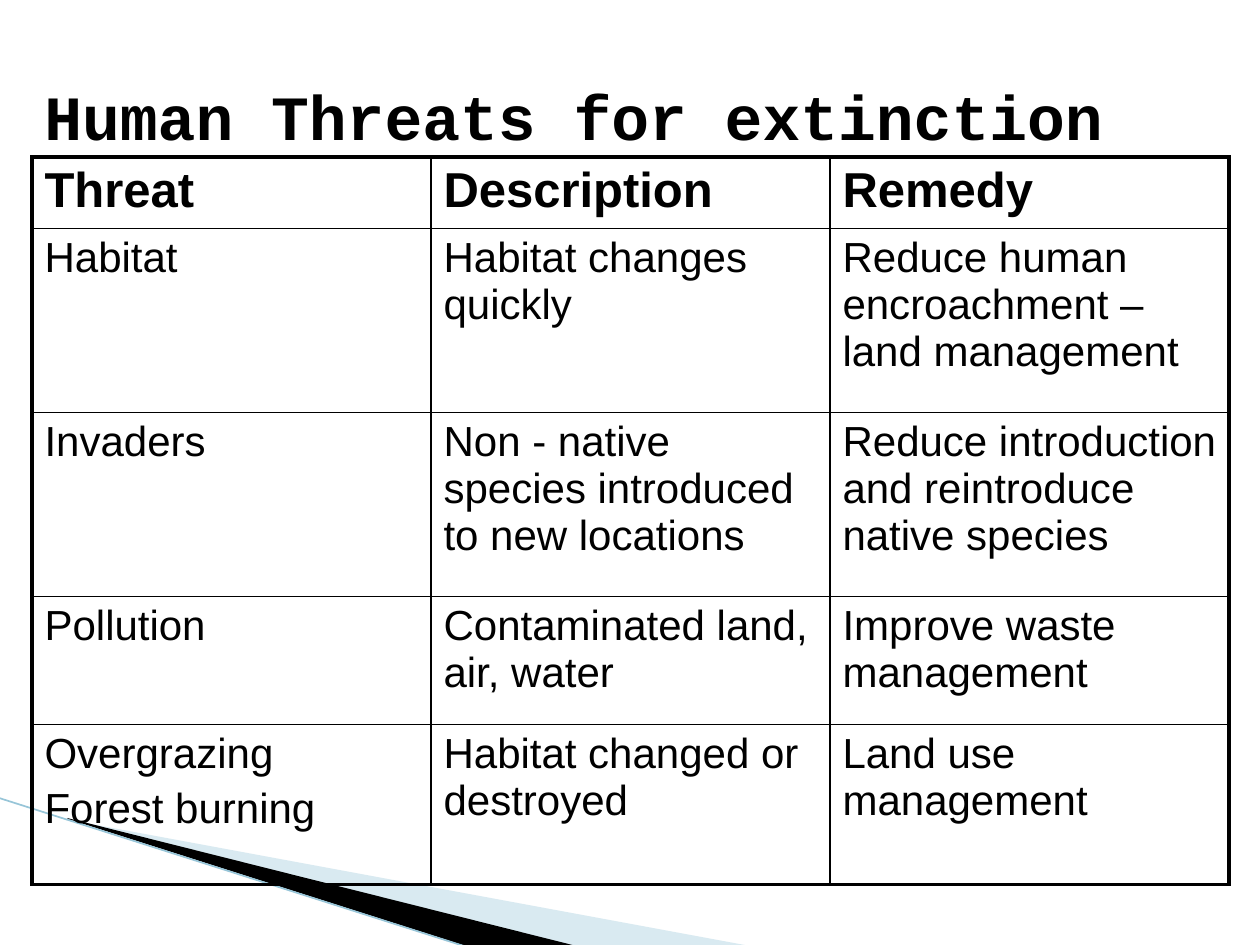
from lxml import etree
from pptx import Presentation
from pptx import util as u
from pptx.dml.color import RGBColor
from pptx.enum import shapes, text
from pptx.oxml import ns

PX = u.Inches(1) / 126
BLACK = RGBColor(0, 0, 0)
PALE_BLUE = RGBColor(0xA0, 0xCB, 0xDC)
LINE_BLUE = RGBColor(0x97, 0xC5, 0xD8)

TITLE_FONT = {"name": "Courier New", "size": u.Pt(36), "bold": True}
HEADER_FONT = {"name": "Arial", "size": u.Pt(28), "bold": True}
BODY_FONT = {"name": "Arial", "size": u.Pt(24), "bold": False}

ROWS = [
    ("Threat", "Description", "Remedy"),
    ("Habitat", "Habitat changes quickly",
     "Reduce human encroachment –land management"),
    ("Invaders", "Non - native species introduced to new locations",
     "Reduce introduction and reintroduce native species"),
    ("Pollution", "Contaminated land, air, water", "Improve waste management"),
    ("Overgrazing\nForest burning", "Habitat changed or destroyed",
     "Land use management"),
]
ROW_HEIGHTS = [69, 184, 184, 128, 160]
COLUMN_WIDTH = 399


def px(*lengths):
    return [round(length * PX) for length in lengths]


def format_font(font, values):
    for name, value in values.items():
        setattr(font, name, value)
    font.color.rgb = BLACK


deck = Presentation()
deck.slide_width, deck.slide_height = px(1260, 945)
page = deck.slides.add_slide(deck.slide_layouts[6])

# Corner wedges
wedges = [
    (PALE_BLUE, 40, [(69, 820), (750, 946), (575, 946), (69, 819)]),
    (BLACK, 100, [(67, 818), (576, 946), (469, 947), (68, 819)]),
]
for color, opacity, points in wedges:
    builder = page.shapes.build_freeform(*points[0], scale=PX)
    builder.add_line_segments(points[1:], close=True)
    wedge = builder.convert_to_shape()
    wedge.shadow.inherit = False
    wedge.fill.solid()
    wedge.fill.fore_color.rgb = color
    wedge.line.fill.background()
    if opacity < 100:
        fill_color = wedge._element.spPr.find(".//" + ns.qn("a:srgbClr"))
        etree.SubElement(fill_color, ns.qn("a:alpha"), val=str(opacity * 1000))

edge = page.shapes.add_connector(
    shapes.MSO_CONNECTOR.STRAIGHT, *px(-1, 798, 467, 947))
edge.line.color.rgb = LINE_BLUE
edge.line.width = u.Pt(0.95)
etree.SubElement(edge._element.spPr, ns.qn("a:effectLst"))

# Title
title = page.shapes.add_textbox(*px(32, 73, 1134, 84))
frame = title.text_frame
frame.word_wrap = True
frame.vertical_anchor = text.MSO_ANCHOR.MIDDLE
para = frame.paragraphs[0]
span = para.add_run()
span.text = "Human Threats for extinction"
format_font(span.font, TITLE_FONT)

# Threat table: thick outer border, thin inner rules
table = page.shapes.add_table(
    len(ROWS), 3, *px(32, 157, 3 * COLUMN_WIDTH, sum(ROW_HEIGHTS))).table
table.first_row = table.horz_banding = False
for column in table.columns:
    column.width = px(COLUMN_WIDTH)[0]

for r, row in enumerate(ROWS):
    table.rows[r].height = px(ROW_HEIGHTS[r])[0]
    for c, words in enumerate(row):
        cell = table.cell(r, c)
        cell.text = words
        for i, para in enumerate(cell.text_frame.paragraphs):
            if i > 0:
                para.space_before = u.Pt(4.8)
            format_font(para.runs[0].font, BODY_FONT if r else HEADER_FONT)
        outer_sides = {"lnL": c == 0, "lnR": c == 2,
                       "lnT": r == 0, "lnB": r == len(ROWS) - 1}
        properties = cell._tc.get_or_add_tcPr()
        for side, outer in outer_sides.items():
            border = etree.SubElement(properties, ns.qn("a:" + side),
                                      w=str(u.Pt(2.25 if outer else 1)))
            fill = etree.SubElement(border, ns.qn("a:solidFill"))
            etree.SubElement(fill, ns.qn("a:srgbClr"), val=str(BLACK))
        cell.fill.background()

deck.save("out.pptx")
